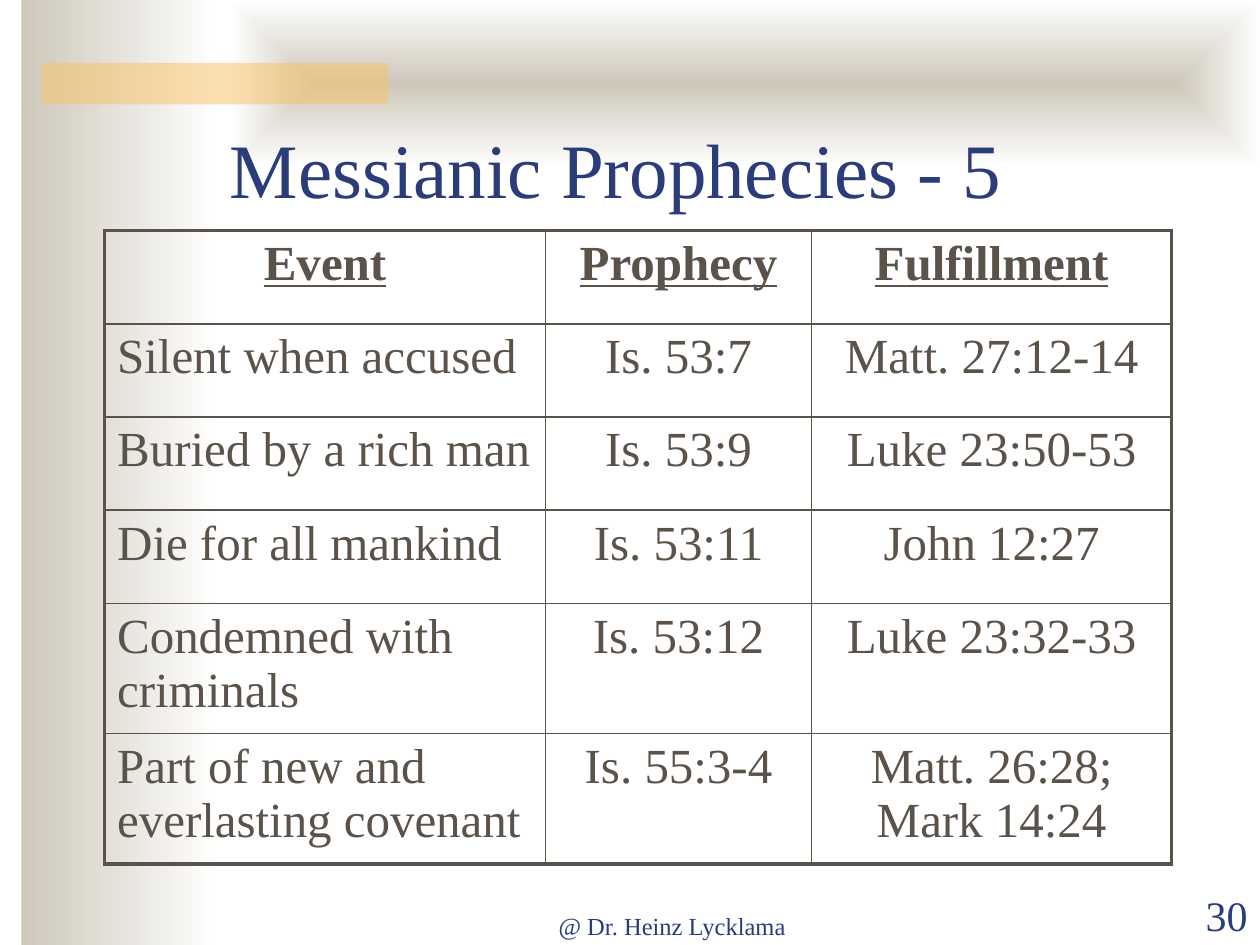
from lxml import etree
from pptx import Presentation
from pptx.dml.color import RGBColor
from pptx.enum.shapes import MSO_SHAPE
from pptx.enum.text import MSO_ANCHOR, PP_ALIGN
from pptx.oxml import parse_xml
from pptx.oxml.ns import qn
from pptx.util import Inches, Pt

RECT = MSO_SHAPE.RECTANGLE
LEFT, MID, RIGHT = PP_ALIGN.LEFT, PP_ALIGN.CENTER, PP_ALIGN.RIGHT
BASE = MSO_ANCHOR.BOTTOM
NS = 'xmlns:a="http://schemas.openxmlformats.org/drawingml/2006/main"'
FONT, NAVY, BROWN, SAND, GOLD, WHITE = (
    "Times New Roman", "2A3D7A", "5B5249", "CEC8BA", "FAC164", "FFFFFF")
WIDE, TALL = 10, 7.5
THICK, THIN = 2.25, 1

TEXTS = [
    ("@ Dr. Heinz Lycklama", (3.75, 7.01, 3.17, 0.5), 14, MID),
    ("30", (9, 7.01, 1, 0.5), 24, RIGHT),
    ("Messianic Prophecies - 5", (1.57, 1.08, 6.64, 0.67), 44, MID),
]
ROWS = [
    ("Event", "Prophecy", "Fulfillment"),
    ("Silent when accused", "Is. 53:7", "Matt. 27:12-14"),
    ("Buried by a rich man", "Is. 53:9", "Luke 23:50-53"),
    ("Die for all mankind", "Is. 53:11", "John 12:27"),
    ("Condemned with criminals", "Is. 53:12", "Luke 23:32-33"),
    ("Part of new and everlasting covenant", "Is. 55:3-4", "Matt. 26:28; Mark 14:24"),
]
COLS = (3.5, 2.11, 2.86)
HIGHS = (0.74,) * 4 + (1.03,) * 2


def rgb(code):
    return RGBColor.from_string(code)


def box(at):
    return [Inches(n) for n in at]


def write(frame, text, size=28, color=NAVY, align=MID, bold=False, line=False):
    frame.word_wrap = True
    para = frame.paragraphs[0]
    para.alignment = align
    run = para.add_run()
    run.text = text
    font = run.font
    font.name, font.size, font.bold, font.underline = FONT, Pt(size), bold, line
    font.color.rgb = rgb(color)


def panel(slide, at):
    shape = slide.shapes.add_shape(RECT, *box(at))
    shape.shadow.inherit = False
    shape.line.fill.background()
    return shape


def fade(shape, focus=False):
    fill = shape.fill
    fill.gradient()
    fill.gradient_angle = 0
    for stop, code, spot in zip(fill.gradient_stops, (SAND, WHITE), (0, 1)):
        stop.color.rgb = rgb(code)
        stop.position = spot
    if focus:
        lin = shape.element.spPr.find(qn("a:gradFill")).find(qn("a:lin"))
        lin.getparent().replace(lin, parse_xml(
            f'<a:path {NS} path="shape"><a:fillToRect l="50000" t="50000" '
            'r="50000" b="50000"/></a:path>'))


def edge(cell, sides):
    props = cell._tc.get_or_add_tcPr()
    for side, width in sides.items():
        props.append(parse_xml(
            f'<a:ln{side} {NS} w="{Pt(width)}"><a:solidFill>'
            f'<a:srgbClr val="{BROWN}"/></a:solidFill></a:ln{side}>'))


def grid(slide):
    at = box((0.83, 1.83, sum(COLS), sum(HIGHS)))
    table = slide.shapes.add_table(len(ROWS), len(COLS), *at).table
    table.first_row = table.horz_banding = False
    for col, width in zip(table.columns, COLS):
        col.width = Inches(width)
    for r, (row, high) in enumerate(zip(ROWS, HIGHS)):
        table.rows[r].height = Inches(high)
        for c, text in enumerate(row):
            cell, head = table.cell(r, c), r == 0
            outer = {"L": c == 0, "R": c == len(COLS) - 1,
                     "T": head, "B": r == len(ROWS) - 1}
            edge(cell, {s: THICK if out else THIN for s, out in outer.items()})
            cell.fill.background()
            write(cell.text_frame, text, color=BROWN, bold=head, line=head,
                  align=MID if head or c else LEFT)


def main():
    """Build the prophecy table slide."""
    deck = Presentation()
    deck.slide_width, deck.slide_height = Inches(WIDE), Inches(TALL)
    slide = deck.slides.add_slide(deck.slide_layouts[6])
    fade(panel(slide, (0.17, 0, 1.58, TALL)))
    fade(panel(slide, (1.83, 0, 8.17, 1.33)), focus=True)
    bar = panel(slide, (0.33, 0.5, 2.75, 0.33))
    bar.fill.solid()
    bar.fill.fore_color.rgb = rgb(GOLD)
    tint = bar.element.spPr.find(qn("a:solidFill"))[0]
    etree.SubElement(tint, qn("a:alpha")).set("val", "50000")
    for text, at, size, align in TEXTS:
        frame = slide.shapes.add_textbox(*box(at)).text_frame
        frame.vertical_anchor = BASE
        write(frame, text, size=size, align=align)
    grid(slide)
    deck.save("out.pptx")


if __name__ == "__main__":
    main()
